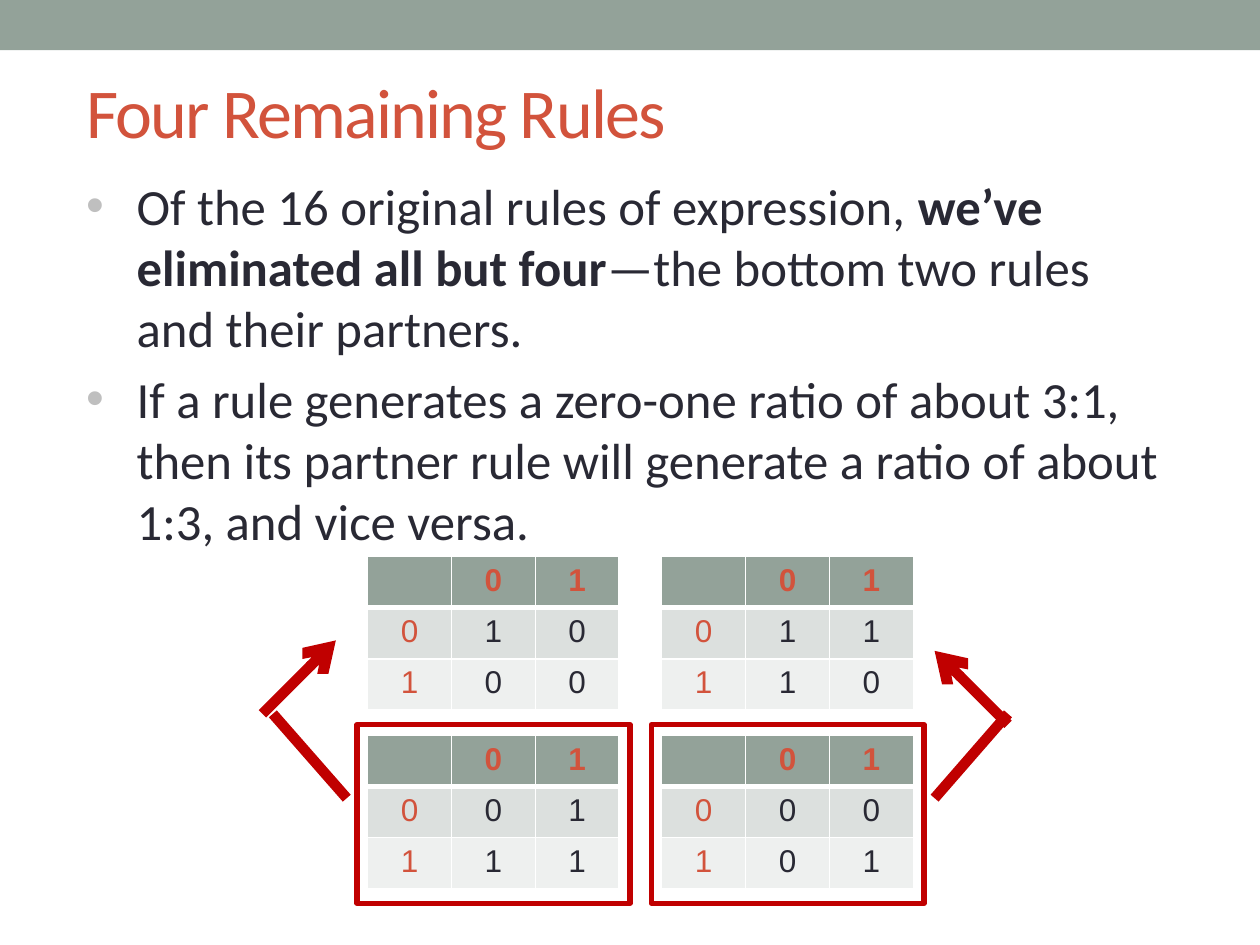
from lxml import etree
from pptx import Presentation
from pptx import util as u
from pptx.dml.color import RGBColor
from pptx.enum import shapes, text
from pptx.oxml import ns, parse_xml

Cm, Pt = u.Cm, u.Pt

THEME = {
    "sage": RGBColor.from_string("93A299"),
    "rust": RGBColor.from_string("D2533C"),
    "ink": RGBColor.from_string("292934"),
    "red": RGBColor.from_string("C00000"),
    "bands": [RGBColor.from_string("DCE0DE"), RGBColor.from_string("EEF0EF")],
    "title": {"name": "Calibri", "size": Pt(40), "bold": False},
    "body": {"name": "Calibri", "size": Pt(29)},
    "cell": {"name": "Arial", "size": Pt(18)},
}


def set_format(target, **values):
    for key, value in values.items():
        setattr(target, key, value)


def add_xml(parent, tag, inner="", **attributes):
    attrs = " ".join(f'{key}="{value}"' for key, value in attributes.items())
    element = parse_xml(f'<a:{tag} {ns.nsdecls("a")} {attrs}>{inner}</a:{tag}>')
    parent.append(element)


prs = Presentation()
set_format(prs, slide_width=Cm(25.4), slide_height=Cm(19.05))
slide = prs.slides.add_slide(prs.slide_layouts[1])
parts = slide.shapes

# Top band
band = parts.add_shape(shapes.MSO_SHAPE.RECTANGLE, 0, 0, prs.slide_width, Cm(1.01))
band.shadow.inherit = False
band.fill.solid()
band.fill.fore_color.rgb = THEME["sage"]
band.line.fill.background()

# Title
title = parts.title
set_format(title, left=Cm(1.48), top=Cm(0.85), width=Cm(22.65), height=Cm(2.75))
set_format(title.text_frame, vertical_anchor=text.MSO_ANCHOR.MIDDLE,
           auto_size=text.MSO_AUTO_SIZE.NONE)
heading = title.text_frame.paragraphs[0]
heading.alignment = text.PP_ALIGN.LEFT
heading_run = heading.add_run()
heading_run.text = "Four Remaining Rules"
set_format(heading_run.font, **THEME["title"])
heading_run.font.color.rgb = THEME["rust"]
heading_run.font._element.set("spc", "-100")

# Bulleted explanation: each run is (text, bold)
points = [
    [("Of the 16 original rules of expression, ", False),
     ("we’ve eliminated all but four", True),
     ("—the bottom two rules \vand their partners.", False)],
    [("If a rule generates a zero-one ratio of about 3:1, then its partner rule "
      "will generate a ratio of about 1:3, and vice versa.", False)],
]
explanation = slide.placeholders[1]
set_format(explanation, left=Cm(1.48), top=Cm(3.39), width=Cm(23.07), height=Cm(7.9))
set_format(explanation.text_frame, word_wrap=True,
           auto_size=text.MSO_AUTO_SIZE.SHAPE_TO_FIT_TEXT)
for index, point in enumerate(points):
    frame = explanation.text_frame
    paragraph = frame.add_paragraph() if index else frame.paragraphs[0]
    set_format(paragraph, space_before=Pt(6 * index), line_spacing=1.0)
    bullet = paragraph._p.get_or_add_pPr()
    bullet.set("marL", str(Cm(1.02)))
    bullet.set("indent", str(-Cm(1.02)))
    add_xml(bullet, "buClr", '<a:srgbClr val="BFBFBF"/>')
    add_xml(bullet, "buFont", typeface="Arial")
    add_xml(bullet, "buChar", char="•")
    for wording, bold in point:
        # A vertical tab marks a line break inside the paragraph
        for part, line in enumerate(wording.split("\v")):
            if part:
                paragraph.add_line_break()
            run = paragraph.add_run()
            run.text = line
            set_format(run.font, bold=bold, **THEME["body"])
            run.font.color.rgb = THEME["ink"]

# Rule tables: outputs for inputs 0 and 1, by row and column of the grid
rules = [
    [["10", "00"], ["11", "10"]],
    [["01", "11"], ["00", "01"]],
]
COLUMN_PITCH, ROW_PITCH = 5.93, 3.6
for grid_row, rule_row in enumerate(rules):
    for grid_column, outputs in enumerate(rule_row):
        rule_table = parts.add_table(
            3, 3, Cm(7.41 + grid_column * COLUMN_PITCH), Cm(11.22 + grid_row * ROW_PITCH),
            Cm(5.08), Cm(3.09)).table
        rule_table.horz_banding = False
        for column in rule_table.columns:
            column.width = Cm(1.69)
        for row in rule_table.rows:
            row.height = Cm(1.03)
        lines = [["", "0", "1"]] + [[str(i), *output] for i, output in enumerate(outputs)]
        for r, line in enumerate(lines):
            for c, value in enumerate(line):
                cell = rule_table.cell(r, c)
                borders = {"lnL": 1, "lnR": 1, "lnT": 3 if r == 1 else 1,
                           "lnB": 3 if r == 0 else 1}
                for side, points_wide in borders.items():
                    add_xml(cell._tc.get_or_add_tcPr(), side,
                            '<a:solidFill><a:srgbClr val="FFFFFF"/></a:solidFill>',
                            w=Pt(points_wide))
                cell.fill.solid()
                cell.fill.fore_color.rgb = THEME["bands"][r - 1] if r else THEME["sage"]
                paragraph = cell.text_frame.paragraphs[0]
                paragraph.alignment = text.PP_ALIGN.CENTER
                if value:
                    run = paragraph.add_run()
                    run.text = value
                    set_format(run.font, bold=r == 0, **THEME["cell"])
                    run.font.color.rgb = THEME["rust" if r == 0 or c == 0 else "ink"]

# Bent arrows from each remaining rule to its partner: start, end, has arrowhead
arrow_lines = [
    ((18.84, 16.09), (20.32, 14.39), False),
    ((20.32, 14.6), (18.84, 13.12), True),
    ((6.99, 16.09), (5.5, 14.39), False),
    ((5.29, 14.39), (6.77, 12.91), True),
]
for start, end, has_head in arrow_lines:
    partner_line = parts.add_connector(shapes.MSO_CONNECTOR.STRAIGHT,
                                       *map(Cm, start), *map(Cm, end))
    partner_line.line.width = Pt(6)
    partner_line.line.color.rgb = THEME["red"]
    if has_head:
        add_xml(partner_line.line._get_or_add_ln(), "tailEnd", type="arrow")
    etree.SubElement(partner_line._element.spPr, ns.qn("a:effectLst"))

# Frames around the two bottom rules
for grid_column in range(2):
    frame = parts.add_shape(shapes.MSO_SHAPE.RECTANGLE,
                            Cm(7.2 + grid_column * COLUMN_PITCH), Cm(14.61),
                            Cm(5.5), Cm(3.6))
    frame.shadow.inherit = False
    frame.fill.background()
    frame.line.width = Pt(3)
    frame.line.color.rgb = THEME["red"]

prs.save("out.pptx")
